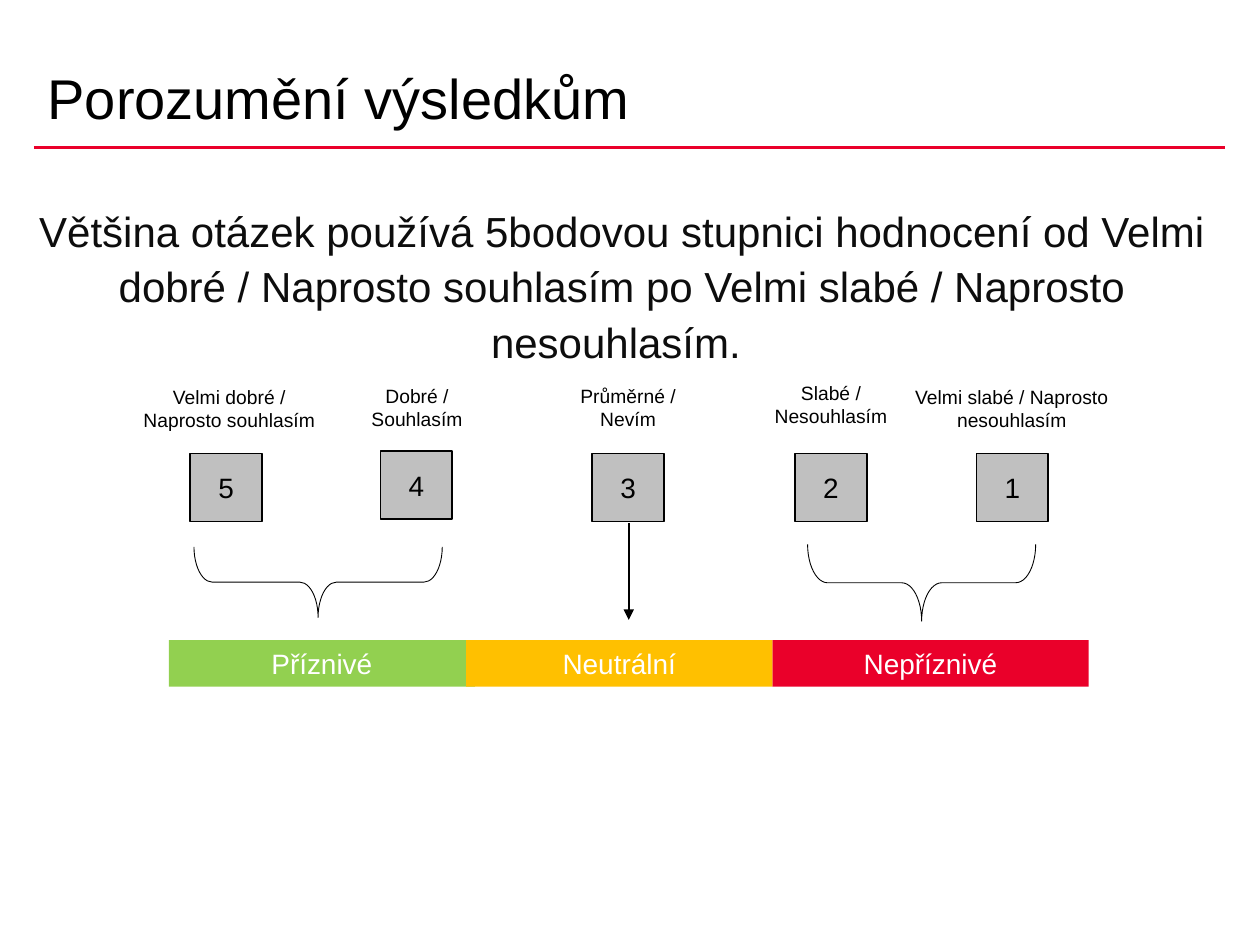
from dataclasses import dataclass

from lxml.etree import SubElement
from pptx import Presentation
from pptx.dml.color import RGBColor
from pptx.enum.shapes import MSO_CONNECTOR, MSO_SHAPE
from pptx.enum.text import MSO_ANCHOR, PP_ALIGN
from pptx.oxml.ns import qn
from pptx.util import Inches, Pt

# Grid of 100 columns by 75 rows
COLUMN = Inches(10) // 100
ROW = Inches(7.5) // 75


@dataclass(frozen=True)
class Theme:
    font: str = "Arial"
    black: str = "000000"
    body: str = "0D0D0D"
    white: str = "FFFFFF"
    grey: str = "C0C0C0"
    green: str = "92D050"
    amber: str = "FFC000"
    red: str = "EA002A"
    title_size: int = 32
    body_size: int = 24
    box_size: int = 16
    label_size: int = 11


@dataclass(frozen=True)
class Box:
    """An area in grid columns and rows."""
    left: float
    top: float
    width: float
    height: float

    def inner(self, left, top, width, height):
        return Box(self.left + left, self.top + top, width, height)

    def lengths(self):
        return (round(self.left * COLUMN), round(self.top * ROW),
                round(self.width * COLUMN), round(self.height * ROW))


THEME = Theme()


def write(shape, text, *, size, color=THEME.black, align=PP_ALIGN.CENTER,
          anchor=MSO_ANCHOR.TOP, spacing=1.0, wrap=True, insets=(0.1, 0.05)):
    frame = shape.text_frame
    frame.word_wrap = wrap
    frame.vertical_anchor = anchor
    frame.margin_left = frame.margin_right = Inches(insets[0])
    frame.margin_top = frame.margin_bottom = Inches(insets[1])
    frame.text = text
    for paragraph in frame.paragraphs:
        paragraph.alignment = align
        paragraph.line_spacing = spacing
        for run in paragraph.runs:
            run.font.name = THEME.font
            run.font.size = Pt(size)
            run.font.color.rgb = RGBColor.from_string(color)


def add_text(slide, box, text, **text_format):
    shape = slide.shapes.add_textbox(*box.lengths())
    write(shape, text, **text_format)


def add_shape(slide, kind, box, fill=None, line_width=None):
    shape = slide.shapes.add_shape(kind, *box.lengths())
    shape.shadow.inherit = False
    if fill:
        shape.fill.solid()
        shape.fill.fore_color.rgb = RGBColor.from_string(fill)
    else:
        shape.fill.background()
    if line_width:
        shape.line.color.rgb = RGBColor.from_string(THEME.black)
        shape.line.width = Pt(line_width)
    else:
        shape.line.fill.background()
    return shape


def add_line(slide, box, color, width, arrow=False):
    left, top, across, down = box.lengths()
    connector = slide.shapes.add_connector(
        MSO_CONNECTOR.STRAIGHT, left, top, left + across, top + down)
    connector.line.color.rgb = RGBColor.from_string(color)
    connector.line.width = Pt(width)
    if arrow:
        SubElement(connector.line._get_or_add_ln(), qn("a:tailEnd"), type="triangle")
    SubElement(connector._element.spPr, qn("a:effectLst"))


def add_brace(slide, box):
    """Draw a brace that fills the box and points down."""
    upright = box.inner((box.width - box.height) / 2, (box.height - box.width) / 2,
                        box.height, box.width)
    brace = add_shape(slide, MSO_SHAPE.LEFT_BRACE, upright, line_width=0.5)
    brace.rotation = 270
    brace.adjustments[0] = 0.26
    brace.adjustments[1] = 0.5


def add_heading(slide, box):
    add_text(slide, box.inner(0.1, 0, 90, 10.3), "Porozumění výsledkům",
             size=THEME.title_size, align=PP_ALIGN.LEFT,
             anchor=MSO_ANCHOR.BOTTOM, spacing=0.8)
    add_line(slide, box.inner(0, box.height, box.width, 0), THEME.red, 2)


def add_introduction(slide, box):
    add_text(slide, box,
             "Většina otázek používá 5bodovou stupnici hodnocení od Velmi dobré / "
             "Naprosto souhlasím po Velmi slabé / Naprosto nesouhlasím. ",
             size=THEME.body_size, color=THEME.body, spacing=1.1, insets=(0.11, 0.06))


def add_scale(slide, box):
    # Score, square left and top, label, label left, top and width
    scores = [
        ("5", 5, 6.2, "Velmi dobré /\nNaprosto souhlasím", 0, 0.3, 16.2),
        ("4", 20.1, 6, "Dobré /\nSouhlasím", 17.6, 0.2, 10.8),
        ("3", 36.9, 6.2, "Průměrné /\nNevím", 30.5, 0.2, 18.5),
        ("2", 53, 6.2, "Slabé / Nesouhlasím", 50.3, 0, 11.1),
        ("1", 67.4, 6.2, "Velmi slabé / Naprosto nesouhlasím", 61.3, 0.3, 17.8),
    ]
    for score, left, top, label, label_left, label_top, label_width in scores:
        square = add_shape(slide, MSO_SHAPE.RECTANGLE,
                           box.inner(left, top, 5.7, 5.4), THEME.grey, 1)
        write(square, score, size=THEME.box_size, anchor=MSO_ANCHOR.MIDDLE, wrap=False)
        add_text(slide, box.inner(label_left, label_top, label_width, 4.7),
                 label, size=THEME.label_size)


def add_links(slide, box):
    add_brace(slide, box.inner(0, 1.9, 19.7, 5.6))
    add_line(slide, box.inner(34.5, 0, 0, 7.7), THEME.black, 1, arrow=True)
    add_brace(slide, box.inner(48.7, 1.7, 18.1, 6.1))


def add_result_bar(slide, box):
    results = [("Příznivé", THEME.green, 24.3), ("Nepříznivé", THEME.red, 25.1),
               ("Neutrální", THEME.amber, 24.3)]
    lefts = [0, box.width - 25.1, 23.6]
    for (name, color, width), left in zip(results, lefts):
        band = add_shape(slide, MSO_SHAPE.RECTANGLE,
                         box.inner(left, 0, width, box.height), color)
        write(band, name, size=THEME.box_size, color=THEME.white,
              anchor=MSO_ANCHOR.MIDDLE)


def main():
    presentation = Presentation()
    presentation.slide_width = 100 * COLUMN
    presentation.slide_height = 75 * ROW
    slide = presentation.slides.add_slide(presentation.slide_layouts[6])

    add_heading(slide, Box(2.7, 0.5, 94.5, 11.2))
    add_introduction(slide, Box(1.6, 15.3, 95.5, 12.8))
    add_scale(slide, Box(10.1, 29.8, 79.1, 11.6))
    add_links(slide, Box(15.4, 41.5, 66.8, 7.8))
    add_result_bar(slide, Box(13.4, 50.8, 73, 3.7))

    presentation.save("out.pptx")


if __name__ == "__main__":
    main()
